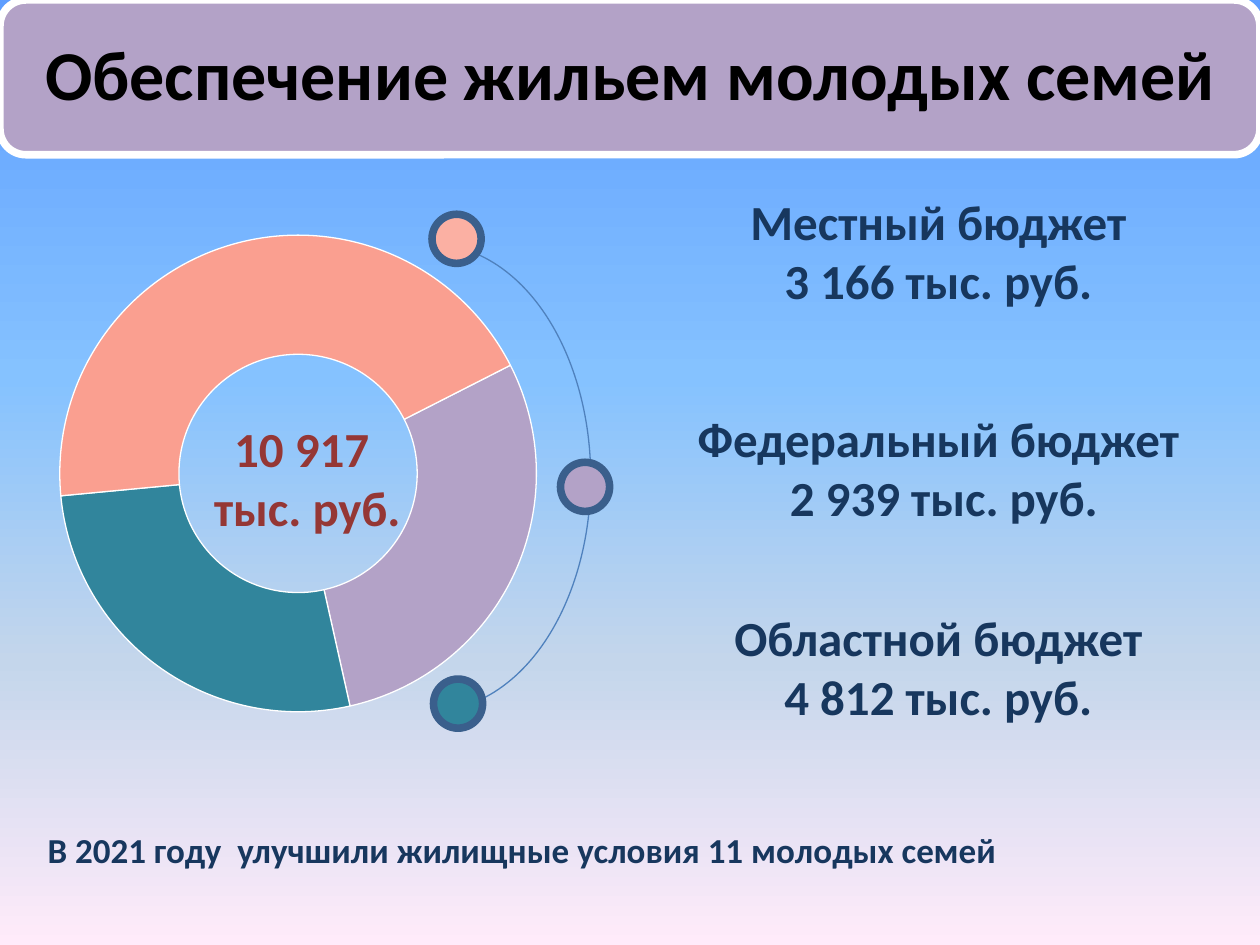
from dataclasses import dataclass
from typing import Any, NamedTuple

import pptx
import pptx.chart.data
import pptx.dml.color
import pptx.enum.chart
import pptx.enum.shapes
import pptx.enum.text
import pptx.oxml
import pptx.oxml.ns
import pptx.util
from pptx.util import Cm, Pt

ALIGN = pptx.enum.text.PP_ALIGN
SHAPE = pptx.enum.shapes.MSO_SHAPE


@dataclass(frozen=True)
class Theme:
    font: str = "Calibri"
    title_size: int = 40
    label_size: int = 28
    note_size: int = 20
    chart_size: int = 18
    black: str = "000000"
    white: str = "FFFFFF"
    navy: str = "17375E"
    maroon: str = "953735"
    lilac: str = "B3A2C7"
    teal: str = "31859C"
    coral: str = "FA9F90"
    light_coral: str = "FBB0A3"
    arc: str = "4F81BD"
    ring: str = "3A5F8C"
    thin: float = 0.75
    thick: float = 4.33
    sky: tuple = ((0, "5E9EFF"), (40, "85C2FF"), (70, "C4D6EB"), (100, "FFEBFA"))


THEME = Theme()


class Area(NamedTuple):
    left: float
    top: float
    width: float
    height: float

    def lengths(self) -> list[int]:
        return [Cm(value) for value in self]


class Budget(NamedTuple):
    lines: tuple[str, str]
    top: float
    height: float


class Marker(NamedTuple):
    left: float
    top: float
    color: str


class Slice(NamedTuple):
    name: str
    share: int
    color: str


BUDGETS = (
    Budget(("Местный бюджет", "3 166 тыс. руб."), 3.53, 3.05),
    Budget(("Федеральный бюджет", " 2 939 тыс. руб."), 7.72, 3.4),
    Budget(("Областной бюджет", "4 812 тыс. руб."), 11.53, 3.81),
)
MARKERS = (
    Marker(8.71, 4.32, THEME.light_coral),
    Marker(11.3, 9.32, THEME.lilac),
    Marker(8.74, 13.69, THEME.teal),
)
MARKER_SIZE = 0.99
SLICES = (
    Slice("1", 29, THEME.lilac),
    Slice("2", 27, THEME.teal),
    Slice("3", 44, THEME.coral),
)
FIRST_SLICE_ANGLE = 63


def rgb(color: str) -> pptx.dml.color.RGBColor:
    return pptx.dml.color.RGBColor.from_string(color)


def apply(target: Any, values: dict[str, Any]) -> None:
    for name, value in values.items():
        setattr(target, name, value)


def paint_line(line: Any, color: str, width: float) -> None:
    line.color.rgb = rgb(color)
    line.width = Pt(width)


def paint_background(page: Any) -> None:
    """Fill the page with the vertical sky gradient."""
    fill = page.background.fill
    fill.gradient()
    fill.gradient_angle = 270
    stops = next(page.element.iter(pptx.oxml.ns.qn("a:gsLst")))
    for stop in list(stops):
        stops.remove(stop)
    for percent, color in THEME.sky:
        stops.append(pptx.oxml.parse_xml(
            f'<a:gs {pptx.oxml.ns.nsdecls("a")} pos="{percent * 1000}">'
            f'<a:srgbClr val="{color}"/></a:gs>'))


def add_outline(page: Any, kind: Any, area: Area, fill: str | None = None,
                line: str | None = None, width: float = THEME.thin) -> Any:
    """Add a preset shape; a missing colour means no fill or no line."""
    shape = page.shapes.add_shape(kind, *area.lengths())
    shape.shadow.inherit = False
    if fill:
        shape.fill.solid()
        shape.fill.fore_color.rgb = rgb(fill)
    else:
        shape.fill.background()
    if line:
        paint_line(shape.line, line, width)
    else:
        shape.line.fill.background()
    return shape


def write(box: Any, lines: tuple[str, ...], size: int, color: str,
          alignment: Any = ALIGN.CENTER, line_spacing: float = 1.0) -> None:
    frame = box.text_frame
    apply(frame, {"word_wrap": True,
                  "auto_size": pptx.enum.text.MSO_AUTO_SIZE.NONE,
                  "vertical_anchor": pptx.enum.text.MSO_ANCHOR.MIDDLE})
    for index, line in enumerate(lines):
        para = frame.add_paragraph() if index else frame.paragraphs[0]
        apply(para, {"alignment": alignment, "line_spacing": line_spacing})
        span = para.add_run()
        span.text = line
        apply(span.font, {"name": THEME.font, "size": Pt(size), "bold": True})
        span.font.color.rgb = rgb(color)


def add_title(page: Any, text: str) -> None:
    banner = add_outline(page, SHAPE.ROUNDED_RECTANGLE, Area(0, 0, 25.4, 3.12),
                         THEME.lilac, THEME.white, THEME.thick)
    title = page.shapes.title
    apply(title, dict(zip(("left", "top", "width", "height"),
                          Area(0.15, 0.15, 25.1, 2.82).lengths())))
    write(title, (text,), THEME.title_size, THEME.black, line_spacing=0.9)
    sides = ("left", "top", "right", "bottom")
    apply(title.text_frame, {f"margin_{side}": Cm(0.43) for side in sides})
    banner.element.addnext(title.element)


def add_doughnut(page: Any) -> None:
    data = pptx.chart.data.CategoryChartData()
    data.categories = [part.name for part in SLICES]
    data.add_series("Series 1", [part.share for part in SLICES])
    chart = page.shapes.add_chart(pptx.enum.chart.XL_CHART_TYPE.DOUGHNUT,
                                  *Area(0.51, 4.39, 11, 10.31).lengths(), data).chart
    apply(chart, {"has_legend": False, "has_title": False})
    apply(chart.font, {"name": THEME.font, "size": Pt(THEME.chart_size)})
    chart.font.color.rgb = rgb(THEME.black)
    series = chart.plots[0].series[0]
    for index, part in enumerate(SLICES):
        look = series.points[index].format
        look.fill.solid()
        look.fill.fore_color.rgb = rgb(part.color)
        paint_line(look.line, THEME.white, THEME.thin)
    root = chart.element
    next(root.iter(pptx.oxml.ns.qn("c:firstSliceAng"))).set("val", str(FIRST_SLICE_ANGLE))
    root.find(pptx.oxml.ns.qn("c:chart")).addnext(pptx.oxml.parse_xml(
        f'<c:spPr {pptx.oxml.ns.nsdecls("c", "a")}><a:noFill/><a:ln><a:noFill/></a:ln></c:spPr>'))


def main() -> None:
    deck = pptx.Presentation()
    apply(deck, {"slide_width": Cm(25.4), "slide_height": Cm(19.05)})
    page = deck.slides.add_slide(deck.slide_layouts.get_by_name("Title Only"))
    paint_background(page)

    arc = add_outline(page, SHAPE.ARC, Area(5.51, 4.93, 6.4, 9.4), line=THEME.arc)
    arc.adjustments[0], arc.adjustments[1] = 162.95, 52.91
    add_title(page, "Обеспечение жильем молодых семей")
    add_doughnut(page)
    total = add_outline(page, SHAPE.OVAL, Area(2.49, 7.72, 7.19, 3.81))
    write(total, ("10 917", " тыс. руб."), THEME.label_size, THEME.maroon)

    for marker in MARKERS:
        add_outline(page, SHAPE.OVAL, Area(marker.left, marker.top, MARKER_SIZE, MARKER_SIZE),
                    marker.color, THEME.ring, THEME.thick)
    for budget in BUDGETS:
        box = page.shapes.add_textbox(*Area(13.11, budget.top, 11.61, budget.height).lengths())
        write(box, budget.lines, THEME.label_size, THEME.navy)
    note = page.shapes.add_textbox(*Area(0.71, 15.72, 24, 2.79).lengths())
    write(note, ("В 2021 году  улучшили жилищные условия 11 молодых семей",),
          THEME.note_size, THEME.navy, ALIGN.JUSTIFY)
    deck.save("out.pptx")


if __name__ == "__main__":
    main()
